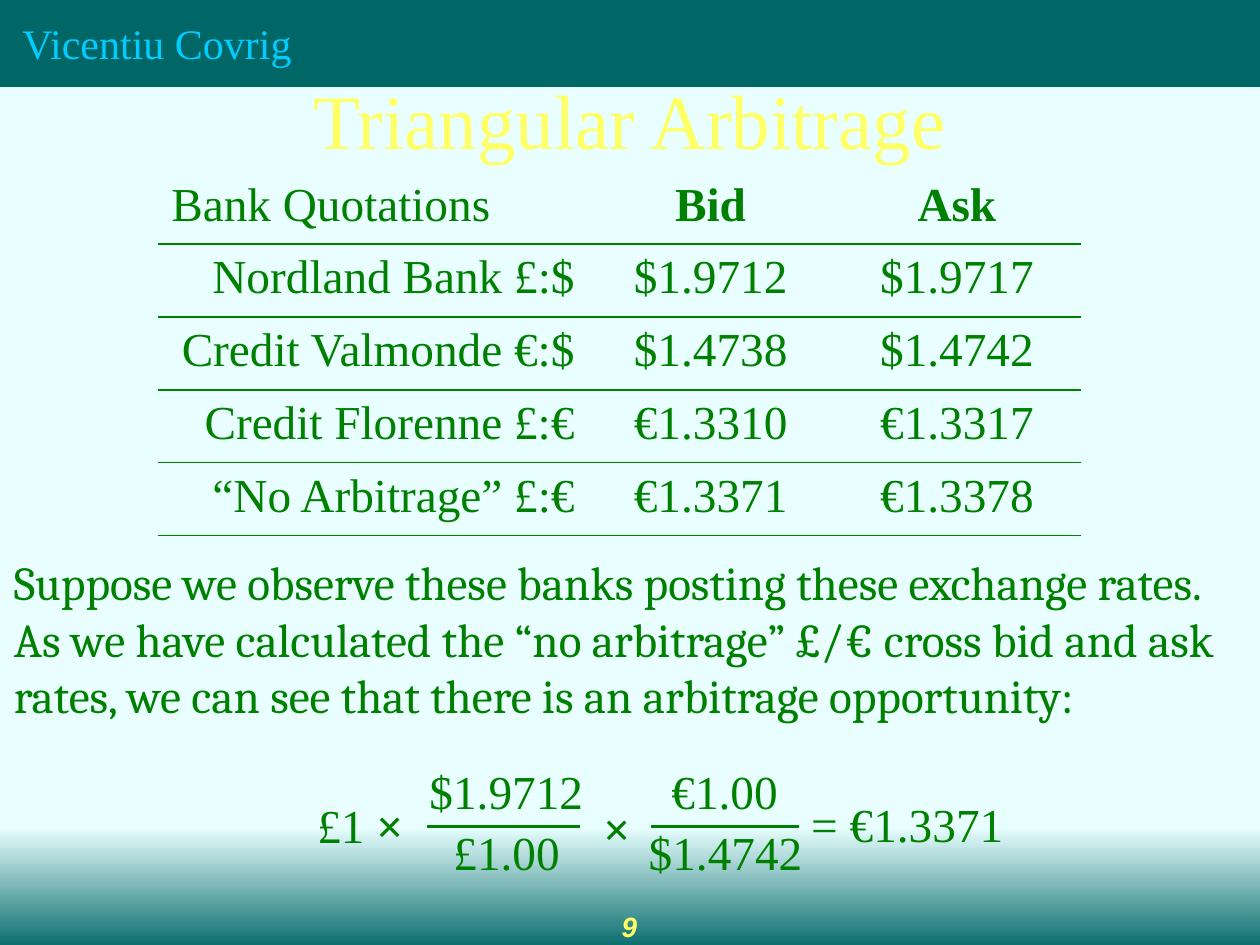
from lxml import etree
from pptx import Presentation
from pptx import util as u
from pptx.dml import color
from pptx.enum import shapes, text
from pptx.oxml.ns import qn

SERIF, BODY, SANS = "Times New Roman", "Cambria", "Arial"
GREEN, TEAL, PALE, YELLOW, CYAN = "008000", "006666", "E9FFFF", "FFFF66", "00CCFF"
LEFT, MID, RIGHT = text.PP_ALIGN.LEFT, text.PP_ALIGN.CENTER, text.PP_ALIGN.RIGHT
TOP, CENTER, BOTTOM = (text.MSO_ANCHOR.TOP, text.MSO_ANCHOR.MIDDLE,
                       text.MSO_ANCHOR.BOTTOM)


def rgb(code):
    return color.RGBColor.from_string(code)


class Deck:
    size, font, ink = 27, SERIF, GREEN

    def __init__(self):
        self.prs = Presentation()
        self.prs.slide_width, self.prs.slide_height = u.Inches(10), u.Inches(7.5)
        self.slide = self.prs.slides.add_slide(self.prs.slide_layouts[6])
        fill = self.slide.background.fill
        fill.solid()
        fill.fore_color.rgb = rgb(PALE)

    def run(self, para, words, size=None, font=None, ink=None, bold=False,
            slant=False):
        run = para.add_run()
        run.text = words
        run.font.size = u.Pt(size or self.size)
        run.font.name = font or self.font
        run.font.color.rgb = rgb(ink or self.ink)
        run.font.bold, run.font.italic = bold, slant

    def rect(self, *box):
        rect = self.slide.shapes.add_shape(
            shapes.MSO_SHAPE.RECTANGLE, *map(u.Inches, box))
        rect.shadow.inherit = False
        rect.line.fill.background()
        return rect.fill

    def band(self, box, code):
        fill = self.rect(*box)
        fill.solid()
        fill.fore_color.rgb = rgb(code)

    def fade(self, box, start, end):
        fill = self.rect(*box)
        fill.gradient()
        fill.gradient_angle = 270
        for stop, code, pos in zip(fill.gradient_stops, (start, end), (0, 1)):
            stop.color.rgb, stop.position = rgb(code), pos

    def label(self, box, *parts, align=LEFT, anchor=TOP, wrap=True, inset=None,
              space=None, **style):
        frame = self.slide.shapes.add_textbox(*map(u.Inches, box)).text_frame
        frame.word_wrap, frame.vertical_anchor = wrap, anchor
        if inset:
            frame.margin_left = frame.margin_right = u.Inches(inset[0])
            frame.margin_top = frame.margin_bottom = u.Inches(inset[1])
        para = frame.paragraphs[0]
        para.alignment = align
        if space:
            para.line_spacing = space
        for words, bold in parts:
            self.run(para, words, bold=bold, **style)

    def rule(self, left, right, y):
        line = self.slide.shapes.add_connector(
            shapes.MSO_CONNECTOR.STRAIGHT,
            *map(u.Inches, (left, y, right, y)))
        line.line.color.rgb = rgb(self.ink)
        line.line.width = u.Pt(1.5)
        etree.SubElement(line._element.spPr, qn("a:effectLst"))

    def edge(self, cell, side, code=None):
        tag = etree.Element(qn("a:ln" + side), w=str(u.Pt(1)))
        if code:
            fill = etree.SubElement(tag, qn("a:solidFill"))
            etree.SubElement(fill, qn("a:srgbClr"), val=code)
        else:
            etree.SubElement(tag, qn("a:noFill"))
        cell._tc.get_or_add_tcPr().append(tag)

    def table(self, box, cols, rows):
        grid = self.slide.shapes.add_table(
            len(rows), len(cols), *map(u.Inches, box)).table
        grid.first_row = grid.horz_banding = False
        for col, width in zip(grid.columns, cols):
            col.width = u.Inches(width)
        for r, row in enumerate(rows):
            for c, words in enumerate(row):
                cell = grid.cell(r, c)
                cell.margin_left = cell.margin_right = u.Inches(0.11)
                cell.margin_top = cell.margin_bottom = u.Inches(0.06)
                for side in "LR":
                    self.edge(cell, side)
                self.edge(cell, "T", self.ink if r else None)
                self.edge(cell, "B", self.ink)
                cell.fill.background()
                para = cell.text_frame.paragraphs[0]
                para.alignment = MID if c else RIGHT if r else LEFT
                self.run(para, words, bold=r == 0 and c > 0)


deck = Deck()

# Header and footer bands
deck.fade((-0.02, 6.56, 10.12, 1), PALE, TEAL)
deck.band((0, 0, 10.06, 0.69), TEAL)
deck.label((0.08, 0.2, 4.08, 0.38), ("Vicentiu Covrig", False),
           anchor=BOTTOM, space=0.7, size=24, ink=CYAN)
deck.label((3.83, 7.17, 2.33, 0.5), ("9", True), align=MID,
           size=16, font=SANS, ink=YELLOW, slant=True)

# Title
deck.label((0.5, 0.67, 9, 0.67), ("Triangular Arbitrage", False), align=MID,
           anchor=BOTTOM, space=0.7, size=44, ink=YELLOW)

# Bank quotations
deck.table((1.25, 1.36, 7.33, 2.89), (3.42, 1.94, 1.97), [
    ("Bank Quotations", "Bid", "Ask"),
    ("Nordland Bank £:$", "$1.9712", "$1.9717"),
    ("Credit Valmonde €:$", "$1.4738", "$1.4742"),
    ("Credit Florenne £:€", "€1.3310", "€1.3317"),
    ("“No Arbitrage” £:€", "€1.3371", "€1.3378"),
])

# Explanation
deck.label((0, 4.33, 10, 1.91), (
    "Suppose we observe these banks posting these exchange rates. As we have "
    "calculated the “no arbitrage” £/€ cross bid and ask rates, we can see "
    "that there is an arbitrage opportunity:", False),
    inset=(0.11, 0.06), font=BODY)

# Equation: terms, then fraction bars
for left, top, width, *parts in [
    (2.42, 6.27, 0.88, ("£1 ", False), ("×", True)),
    (3.31, 6, 1.42, ("$1.9712", False)),
    (3.5, 6.48, 1.05, ("£1.00", False)),
    (4.69, 6.29, 0.41, ("×", True)),
    (5.23, 6, 1.05, ("€1.00", False)),
    (5.05, 6.48, 1.42, ("$1.4742", False)),
    (6.34, 6.26, 1.73, ("= €1.3371", False)),
]:
    deck.label((left, top, width, 0.55), *parts, anchor=CENTER, wrap=False)
for left, right in ((3.39, 4.6), (5.17, 6.34)):
    deck.rule(left, right, 6.56)

deck.prs.save("out.pptx")
